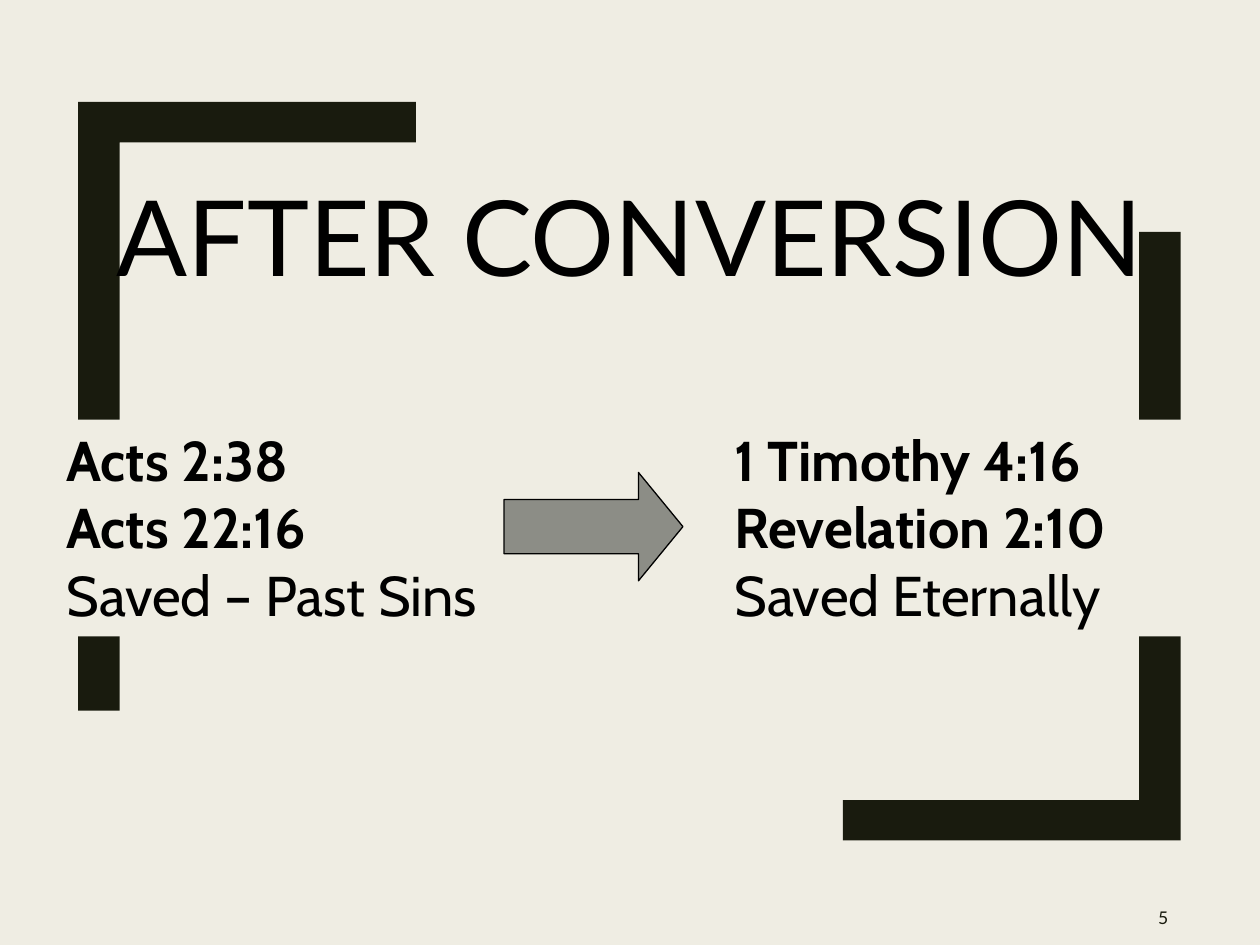
from pptx import Presentation
from pptx.dml.color import RGBColor
from pptx.enum.shapes import MSO_SHAPE
from pptx.enum.text import MSO_ANCHOR, MSO_AUTO_SIZE, PP_ALIGN
from pptx.util import Inches, Pt

RECT, ARROW = MSO_SHAPE.RECTANGLE, MSO_SHAPE.RIGHT_ARROW
LEFT, CENTER, RIGHT = PP_ALIGN.LEFT, PP_ALIGN.CENTER, PP_ALIGN.RIGHT
TOP, MIDDLE, BOTTOM = MSO_ANCHOR.TOP, MSO_ANCHOR.MIDDLE, MSO_ANCHOR.BOTTOM
NO_FIT = MSO_AUTO_SIZE.NONE

THEME = {
    "paper": "EFEDE3", "frame": "191B0E", "ink": "000000", "arrow": "8C8D86",
    "head": "Lato", "body": "Cabin",
    "title": 60, "verse": 32, "number": 10,
}

TITLE = "AFTER CONVERSION"
NUMBER = "5"
# Each panel: left, width, lines as (text, bold)
PANELS = [
    (0.43, 4, [("Acts 2:38", True), ("Acts 22:16", True),
               ("Saved – Past Sins", False)]),
    (5.73, 3.83, [("1 Timothy 4:16", True), ("Revelation 2:10", True),
                  ("Saved Eternally", False)]),
]
PANEL_TOP, PANEL_HIGH = 3.33, 1.72
BRACKET = [(0.95, 5.64), (0.62, 5.64), (0.62, 0.81),
           (3.3, 0.81), (3.3, 1.13), (0.95, 1.13)]
TURN = (9.99, 7.48)  # sums of x and y under the half turn


def color(name):
    return RGBColor.from_string(THEME[name])


def box(*sizes):
    return [Inches(size) for size in sizes]


def paint(shape, fill):
    shape.shadow.inherit = False
    shape.fill.solid()
    shape.fill.fore_color.rgb = color(fill)
    shape.line.fill.background()


def write(shape, lines, size, font, ink="ink", align=LEFT, anchor=TOP):
    """Fill a shape with one paragraph for each (text, bold) pair."""
    frame = shape.text_frame
    frame.word_wrap = True
    frame.auto_size = NO_FIT
    frame.vertical_anchor = anchor
    for i, (text, bold) in enumerate(lines):
        para = frame.add_paragraph() if i else frame.paragraphs[0]
        para.alignment = align
        run = para.add_run()
        run.text = text
        run.font.name = THEME[font]
        run.font.size = Pt(THEME[size])
        run.font.bold = bold
        run.font.color.rgb = color(ink)


def draw_frame(shapes):
    turned = [(TURN[0] - x, TURN[1] - y) for x, y in BRACKET]
    for points in (turned, BRACKET):
        start, *rest = [box(*point) for point in points]
        path = shapes.build_freeform(*start)
        path.add_line_segments(rest, close=True)
        paint(path.convert_to_shape(), "frame")


def main():
    deck = Presentation()
    deck.slide_width, deck.slide_height = box(10, 7.5)
    slide = deck.slides.add_slide(deck.slide_layouts[5])
    slide.background.fill.solid()
    slide.background.fill.fore_color.rgb = color("paper")
    shapes = slide.shapes

    draw_frame(shapes)

    title = shapes.title
    title.left, title.top, title.width, title.height = box(0.75, 1.42, 8.5, 1)
    write(title, [(TITLE, False)], "title", "head", align=CENTER, anchor=BOTTOM)
    title.text_frame.paragraphs[0].line_spacing = 0.89
    # Bring the title in front of the frame
    shapes.element.append(title.element)

    number = shapes.add_textbox(*box(8.06, 7.06, 1.31, 0.44))
    write(number, [(NUMBER, False)], "number", "head", "frame", RIGHT, MIDDLE)

    for left, width, lines in PANELS:
        panel = shapes.add_shape(RECT, *box(left, PANEL_TOP, width, PANEL_HIGH))
        paint(panel, "paper")
        write(panel, lines, "verse", "body")

    arrow = shapes.add_shape(ARROW, *box(4, 3.75, 1.42, 0.86))
    paint(arrow, "arrow")
    arrow.adjustments[0], arrow.adjustments[1] = 0.5, 0.41
    arrow.line.color.rgb = color("ink")
    arrow.line.width = Pt(0.75)

    deck.save("out.pptx")


if __name__ == "__main__":
    main()
